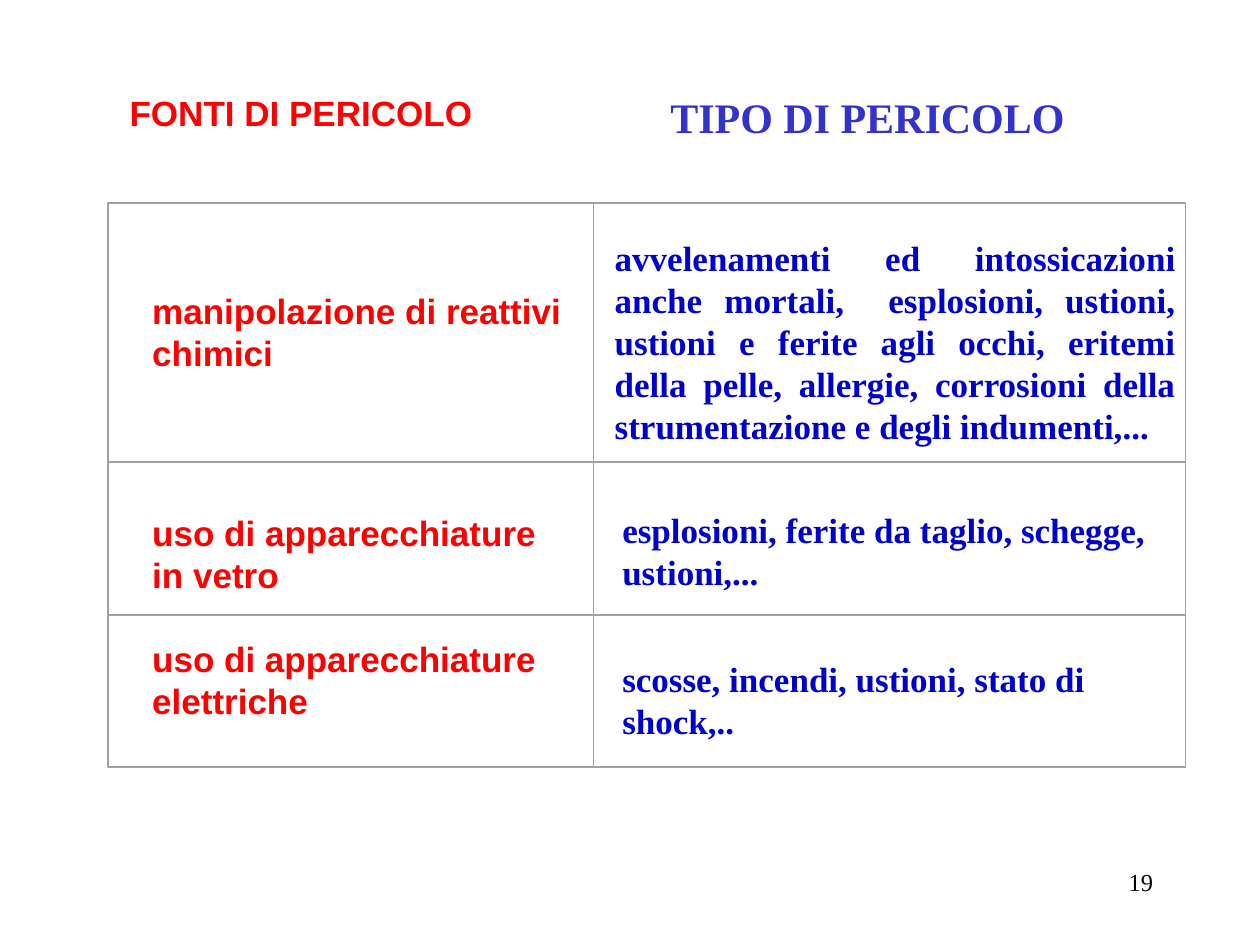
import pptx
import pptx.util
import pptx.dml.color
import pptx.enum.shapes
import pptx.enum.text

Inches, Pt = pptx.util.Inches, pptx.util.Pt
RGBColor = pptx.dml.color.RGBColor
ALIGN = pptx.enum.text.PP_ALIGN

RED = RGBColor(0xFF, 0x00, 0x00)
BLUE = RGBColor(0x00, 0x00, 0xCC)
INDIGO = RGBColor(0x33, 0x33, 0xCC)
BLACK = RGBColor(0x00, 0x00, 0x00)
GREY = RGBColor(0xA0, 0xA0, 0xA0)

# Text formats
SOURCE = {"name": "Arial", "size": Pt(20), "bold": True}
DANGER = {"name": "Times New Roman", "size": Pt(20), "bold": True}
TITLE = {"name": "Times New Roman", "size": Pt(24), "bold": True}
NUMBER = {"name": "Times New Roman", "size": Pt(14), "bold": False}

# Grid: column and row edges
COLS = [0.86, 4.71, 9.41]
ROWS = [1.61, 3.67, 4.88, 6.09]

# Texts: paragraphs, box (left, top, width, height), format, colour, alignment, left inset
TEXTS = [
    (["FONTI DI PERICOLO"], (0.93, 0.68, 3.71, 0.84), SOURCE, RED, ALIGN.JUSTIFY, 0.1),
    (["TIPO DI PERICOLO"], (4.64, 0.68, 4.55, 0.92), TITLE, INDIGO, ALIGN.JUSTIFY, 0.68),
    (["manipolazione di reattivi", "chimici"],
     (1.11, 2.25, 3.55, 0.77), SOURCE, RED, ALIGN.LEFT, 0.1),
    (["avvelenamenti ed intossicazioni anche mortali,  esplosioni, ustioni, "
      "ustioni e ferite agli occhi, eritemi della pelle, allergie, corrosioni "
      "della strumentazione e degli indumenti,..."],
     (4.78, 1.83, 4.65, 1.78), DANGER, BLUE, ALIGN.JUSTIFY, 0.1),
    (["uso di apparecchiature in vetro"],
     (1.11, 4.01, 3.25, 0.77), SOURCE, RED, ALIGN.LEFT, 0.1),
    (["esplosioni, ferite da taglio, schegge, ustioni,..."],
     (4.84, 3.99, 4.41, 0.77), DANGER, BLUE, ALIGN.LEFT, 0.1),
    (["uso di apparecchiature elettriche"],
     (1.11, 5.01, 3.34, 0.77), SOURCE, RED, ALIGN.LEFT, 0.1),
    (["scosse, incendi, ustioni, stato di shock,.."],
     (4.84, 5.17, 4.41, 0.77), DANGER, BLUE, ALIGN.LEFT, 0.1),
    (["19"], (7.17, 6.83, 2.08, 0.5), NUMBER, BLACK, ALIGN.RIGHT, 0.1),
]


def add_cell(s, left, top, right, bottom):
    sp = s.shapes.add_shape(pptx.enum.shapes.MSO_SHAPE.RECTANGLE, Inches(left), Inches(top),
                            Inches(right - left), Inches(bottom - top))
    sp.shadow.inherit = False
    sp.fill.background()
    sp.line.color.rgb = GREY
    sp.line.width = Pt(1)


def add_text(s, lines, box, fmt, color, align, inset):
    tf = s.shapes.add_textbox(*map(Inches, box)).text_frame
    tf.word_wrap = len(lines) == 1  # explicit lines need no wrapping
    tf.margin_left = Inches(inset)
    for i, line in enumerate(lines):
        p = tf.add_paragraph() if i else tf.paragraphs[0]
        p.alignment = align
        r = p.add_run()
        r.text = line
        for key, value in fmt.items():
            setattr(r.font, key, value)
        r.font.color.rgb = color


def main():
    prs = pptx.Presentation()
    prs.slide_width, prs.slide_height = Inches(10), Inches(7.5)
    s = prs.slides.add_slide(prs.slide_layouts[6])

    # Grid cells
    for top, bottom in zip(ROWS, ROWS[1:]):
        for left, right in zip(COLS, COLS[1:]):
            add_cell(s, left, top, right, bottom)

    # Headings, cell texts and page number
    for text in TEXTS:
        add_text(s, *text)

    prs.save("out.pptx")


if __name__ == "__main__":
    main()
